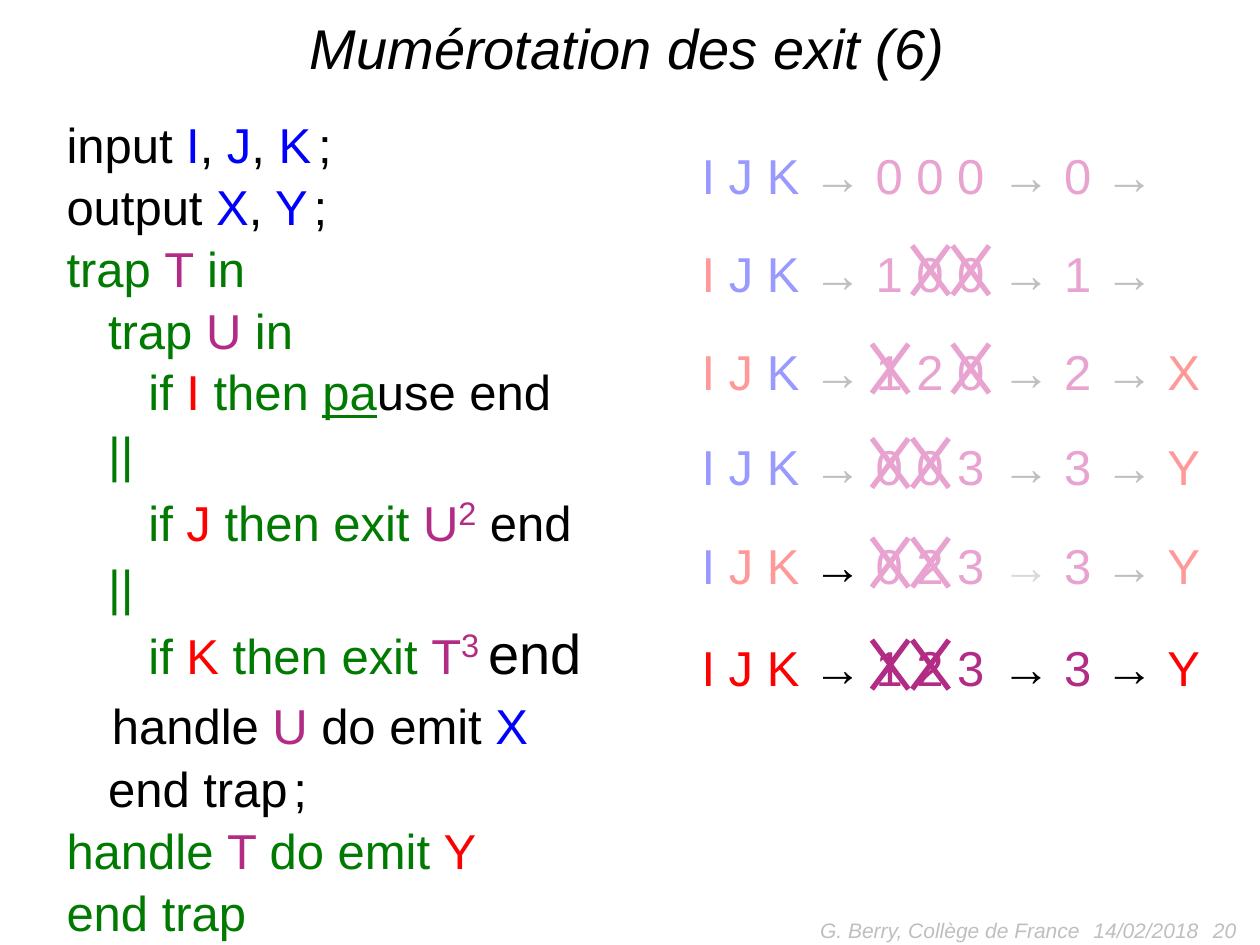
from pptx import Presentation, util as u
from pptx.dml.color import RGBColor
from pptx.enum import shapes, text
from pptx.oxml import xmlchemy

BLACK, BLUE, GREEN, PURPLE, RED = "000000", "0000FF", "007A00", "B22C85", "FF0000"
PALE_BLUE, PALE_RED, PALE_PURPLE = "9999FF", "FF9999", "E8A3D1"
GREY, LIGHT_GREY = "BFBFBF", "D9D9D9"

CODE = [
    (0, [("input ", BLACK), ("I", BLUE), (", ", BLACK), ("J", BLUE), (", ", BLACK),
         ("K", BLUE), (" ", BLUE, 14), (";", BLACK)]),
    (0, [("output ", BLACK), ("X", BLUE), (",", BLACK), (" Y", BLUE),
         (" ", BLUE, 12), (";", BLACK)]),
    (0, [("trap ", GREEN), ("T ", PURPLE), ("in", GREEN)]),
    (1, [("trap ", GREEN), ("U ", PURPLE), ("in", GREEN)]),
    (2, [("if ", GREEN), ("I ", RED), ("then ", GREEN), ("pa", GREEN, 28, "underline"),
         ("use end", BLACK)]),
    (1, [("||", GREEN)]),
    (2, [("if ", GREEN), ("J ", RED), ("then exit ", GREEN), ("U", PURPLE),
         ("2", PURPLE, 32, "super"), (" end", BLACK)]),
    (1, [("||", GREEN)]),
    (2, [("if ", GREEN), ("K ", RED), ("then exit ", GREEN), ("T", PURPLE),
         ("3 ", PURPLE, 32, "super"), ("end", BLACK, 32)]),
    (1.1, [("handle ", BLACK), ("U", PURPLE), (" do emit ", BLACK), ("X", BLUE)]),
    (1, [("end trap", BLACK), (" ", BLACK, 12), (";", BLACK)]),
    (0, [("handle ", GREEN), ("T ", PURPLE), ("do emit ", GREEN), ("Y", RED)]),
    (0, [("end trap", GREEN)]),
]
SPACE_BEFORE = {9: 4, 10: 1}

PALE = (PALE_BLUE, PALE_RED, PALE_PURPLE)
VIVID = (BLUE, RED, PURPLE)
TRACES = [
    (1.08, "", "000", "", "0", "", PALE, (GREY, GREY, GREY)),
    (1.86, "I", "100", "23", "1", "", PALE, (GREY, GREY, GREY)),
    (2.64, "IJ", "120", "13", "2", "X", PALE, (GREY, GREY, GREY)),
    (3.39, "", "003", "12", "3", "Y", PALE, (GREY, GREY, GREY)),
    (4.18, "JK", "023", "12", "3", "Y", PALE, (BLACK, LIGHT_GREY, GREY)),
    (4.99, "IJK", "123", "12", "3", "Y", VIVID, (BLACK, BLACK, BLACK)),
]


def colour(value):
    return RGBColor.from_string(value)


def add_span(para, words, ink, size=28, style=""):
    span = para.add_run()
    span.text = words
    font = span.font
    font.name, font.size = "Arial", u.Pt(size)
    font.color.rgb = colour(ink)
    if style == "underline":
        font.underline = True
    elif style == "italic":
        font.italic = True
    elif style == "super":
        span._r.get_or_add_rPr().set("baseline", "30000")


def add_box(page, left, top, width, height):
    box = page.shapes.add_textbox(*map(u.Inches, (left, top, width, height)))
    box.text_frame.word_wrap = True
    return box.text_frame


def add_title(page, left, top, width, height):
    title = page.shapes.title
    title.left, title.top = u.Inches(left), u.Inches(top)
    title.width, title.height = u.Inches(width), u.Inches(height)
    para = title.text_frame.paragraphs[0]
    para.alignment = text.PP_ALIGN.CENTER
    add_span(para, "Mumérotation des exit (6)", BLACK, 32, "italic")


def add_code(page, left, top, width, height):
    frame = add_box(page, left, top, width, height)
    for number, (level, spans) in enumerate(CODE):
        para = frame.add_paragraph() if number else frame.paragraphs[0]
        properties = para._p.get_or_add_pPr()
        properties.set("marL", str(u.Inches(round(level * 0.325, 2))))
        properties.set("indent", "0")
        para.line_spacing = 1.05
        if number in SPACE_BEFORE:
            para.space_before = u.Pt(SPACE_BEFORE[number])
        for span in spans:
            add_span(para, *span)


def add_trace_text(page, left, top, width, spans):
    para = add_box(page, left, top, width, 0.6).paragraphs[0]
    para.line_spacing = 1.05
    for span in spans:
        add_span(para, *span)


def add_cross(page, left, top, width, height, ink):
    right, bottom = left + width, top + height
    for start, end in ((bottom, top), (top, bottom)):
        line = page.shapes.add_connector(
            shapes.MSO_CONNECTOR.STRAIGHT,
            *map(u.Inches, (left, start, right, end)))
        line.line.color.rgb = colour(ink)
        line.line.width = u.Pt(3)
        line._element.spPr.append(xmlchemy.OxmlElement("a:effectLst"))


def add_trace(page, left, trace):
    top, present, codes, crossed, maximum, emitted, palette, arrows = trace
    absent_ink, present_ink, code_ink = palette
    signals = [(name + " ", present_ink if name in present else absent_ink)
               for name in "IJK"]
    add_trace_text(page, left, top, 2.6,
                   signals + [("→ ", arrows[0]), (" ".join(codes), code_ink)])
    result = [("→ ", arrows[1]), (maximum + " ", code_ink)]
    if emitted:
        result += [("→ ", arrows[2]), (emitted, present_ink)]
    else:
        result.append(("→", arrows[2]))
    add_trace_text(page, left + 2.38, top, 1.95, result)
    for position in crossed:
        add_cross(page, left + 1.13 + 0.32 * int(position), top + 0.09,
                  0.29, 0.39, code_ink)


def add_footer(page, top, height):
    right, left = text.PP_ALIGN.RIGHT, text.PP_ALIGN.LEFT
    for words, start, width, alignment in (
            ("G. Berry, Collège de France", 5.5, 3.17, right),
            ("14/02/2018", 8.58, 1.15, left),
            ("20", 9.41, 0.5, right)):
        frame = add_box(page, start, top, width, height)
        frame.margin_top = frame.margin_bottom = 0
        frame.vertical_anchor = text.MSO_ANCHOR.MIDDLE
        para = frame.paragraphs[0]
        para.alignment = alignment
        add_span(para, words, GREY, 12, "italic")


def main():
    deck = Presentation()
    deck.slide_width, deck.slide_height = u.Inches(10), u.Inches(7.5)
    page = deck.slides.add_slide(deck.slide_layouts[5])
    add_title(page, -0.04, 0.05, 10.04, 0.64)
    add_code(page, 0.43, 0.84, 4.8, 6.36)
    for trace in TRACES:
        add_trace(page, 5.47, trace)
    add_footer(page, 7.26, 0.24)
    deck.save("out.pptx")


if __name__ == "__main__":
    main()
